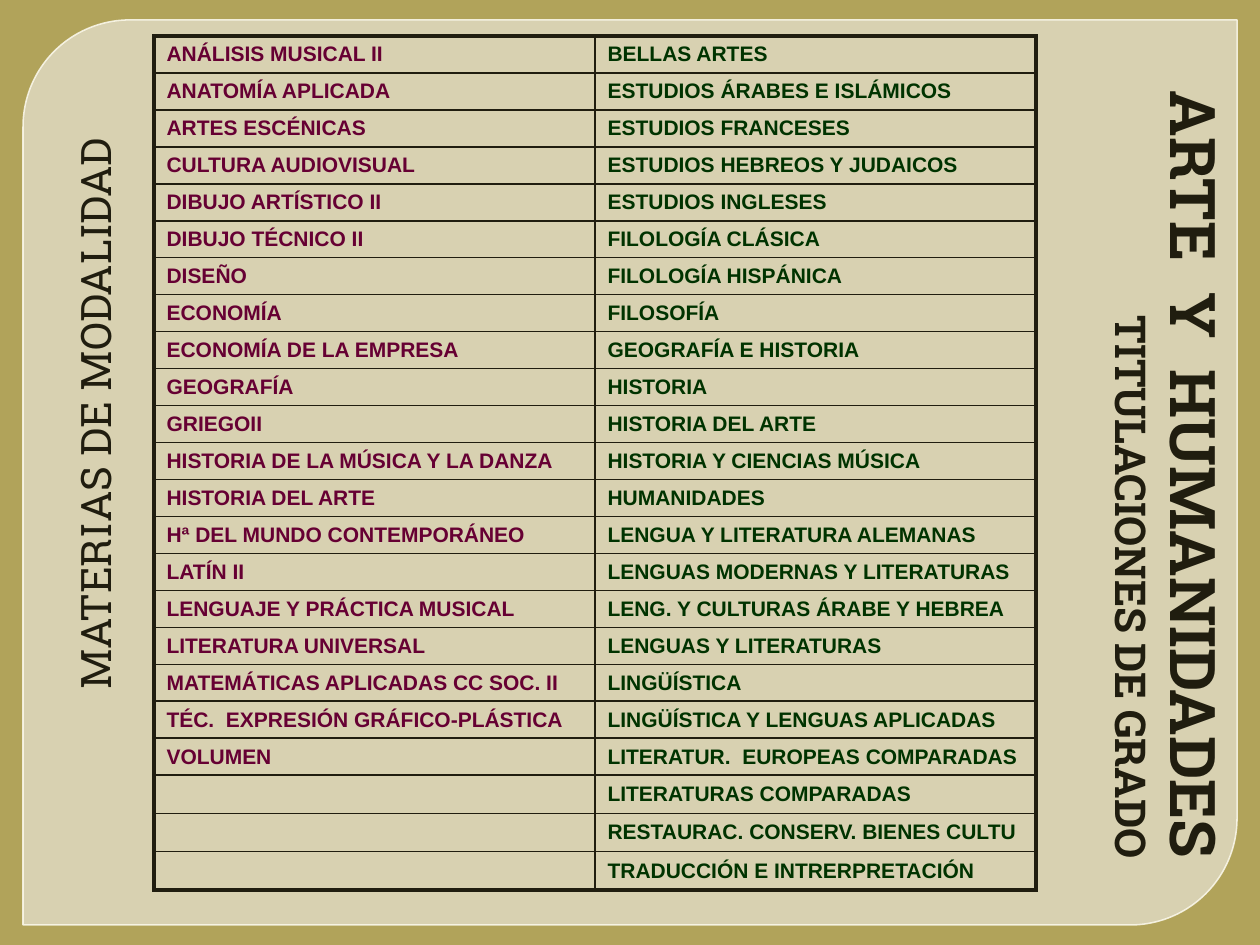
from itertools import zip_longest

from lxml import etree
from pptx import Presentation
from pptx.dml.color import RGBColor
from pptx.enum.shapes import MSO_SHAPE
from pptx.enum.text import MSO_ANCHOR, MSO_AUTO_SIZE, PP_ALIGN
from pptx.oxml.ns import qn
from pptx.util import Emu, Pt

PANEL_SHAPE = MSO_SHAPE.ROUND_2_DIAG_RECTANGLE
TOP, MIDDLE, BOTTOM = MSO_ANCHOR.TOP, MSO_ANCHOR.MIDDLE, MSO_ANCHOR.BOTTOM
NO_AUTOFIT = MSO_AUTO_SIZE.NONE
RIGHT = PP_ALIGN.RIGHT
SECTION_LAYOUT = 2

PX_PER_INCH = 126
COLORS = {
    "background": "B1A35A",
    "panel": "EEEBE0",
    "panel_line": "FBF8EB",
    "ink": "201D0F",
    "subject": "660033",
    "degree": "003300",
}
HEADING_FONT, TABLE_FONT = "Roboto Slab", "Arial"
TABLE_SIZE = 12
THICK, THIN = 2.25, 1

SUBJECTS = [
    "ANÁLISIS MUSICAL II", "ANATOMÍA APLICADA", "ARTES ESCÉNICAS",
    "CULTURA AUDIOVISUAL", "DIBUJO ARTÍSTICO II", "DIBUJO TÉCNICO II",
    "DISEÑO", "ECONOMÍA", "ECONOMÍA DE LA EMPRESA", "GEOGRAFÍA", "GRIEGOII",
    "HISTORIA DE LA MÚSICA Y LA DANZA", "HISTORIA DEL ARTE",
    "Hª DEL MUNDO CONTEMPORÁNEO", "LATÍN II", "LENGUAJE Y PRÁCTICA MUSICAL",
    "LITERATURA UNIVERSAL", "MATEMÁTICAS APLICADAS CC SOC. II",
    "TÉC.  EXPRESIÓN GRÁFICO-PLÁSTICA", "VOLUMEN",
]
DEGREES = [
    "BELLAS ARTES", "ESTUDIOS ÁRABES E ISLÁMICOS", "ESTUDIOS FRANCESES",
    "ESTUDIOS HEBREOS Y JUDAICOS", "ESTUDIOS INGLESES", "FILOLOGÍA CLÁSICA",
    "FILOLOGÍA HISPÁNICA", "FILOSOFÍA", "GEOGRAFÍA E HISTORIA", "HISTORIA",
    "HISTORIA DEL ARTE", "HISTORIA Y CIENCIAS MÚSICA", "HUMANIDADES",
    "LENGUA Y LITERATURA ALEMANAS", "LENGUAS MODERNAS Y LITERATURAS",
    "LENG. Y CULTURAS ÁRABE Y HEBREA", "LENGUAS Y LITERATURAS",
    "LINGÜÍSTICA", "LINGÜÍSTICA Y LENGUAS APLICADAS",
    "LITERATUR.  EUROPEAS COMPARADAS", "LITERATURAS COMPARADAS",
    "RESTAURAC. CONSERV. BIENES CULTU", "TRADUCCIÓN E INTRERPRETACIÓN",
]


def px(length):
    return Emu(round(length * 914400 / PX_PER_INCH))


def rgb(name):
    return RGBColor.from_string(COLORS[name])


def style_run(run, font, size, color, bold):
    run.font.name = font
    run.font.size = Pt(size)
    run.font.bold = bold
    run.font.color.rgb = rgb(color)


def set_alpha(fill_element, percent):
    color = fill_element.find(".//" + qn("a:srgbClr"))
    etree.SubElement(color, qn("a:alpha"), val=str(percent * 1000))


def add_panel(slide, left, top, width, height):
    panel = slide.shapes.add_shape(PANEL_SHAPE, px(left), px(top), px(width), px(height))
    panel.shadow.inherit = False
    panel.adjustments[0] = 0.118
    panel.adjustments[1] = 0
    panel.fill.solid()
    panel.fill.fore_color.rgb = rgb("panel")
    panel.line.color.rgb = rgb("panel_line")
    panel.line.width = Pt(0.87)
    properties = panel.element.spPr
    set_alpha(properties.find(qn("a:solidFill")), 65)
    set_alpha(properties.find(qn("a:ln")), 88)
    # Behind the placeholders
    slide.shapes.element.insert(2, panel.element)


def fill_heading(shape, box, rotation, lines, sizes, bold, anchor):
    """Place a rotated placeholder; box is its frame before rotation."""
    shape.left, shape.top, shape.width, shape.height = map(px, box)
    shape.rotation = rotation
    frame = shape.text_frame
    frame.word_wrap = True
    frame.auto_size = NO_AUTOFIT
    frame.vertical_anchor = anchor
    paragraph = frame.paragraphs[0]
    paragraph.text = "\v".join(lines)
    paragraph.alignment = RIGHT
    paragraph.space_before = Pt(0)
    for run, size in zip(paragraph.runs, sizes):
        style_run(run, HEADING_FONT, size, "ink", bold)


def set_borders(cell, widths):
    properties = cell._tc.get_or_add_tcPr()
    for position, (side, width) in enumerate(zip("LRTB", widths)):
        line = etree.Element(qn(f"a:ln{side}"), w=str(Pt(width)))
        fill = etree.SubElement(line, qn("a:solidFill"))
        etree.SubElement(fill, qn("a:srgbClr"), val=COLORS["ink"])
        properties.insert(position, line)


def add_degree_table(slide, left, top, width, row_height):
    rows = list(zip_longest(SUBJECTS, DEGREES, fillvalue=""))
    last = len(rows) - 1
    table = slide.shapes.add_table(
        len(rows), 2, px(left), px(top), px(width), px(row_height * len(rows))
    ).table
    table.first_row = table.horz_banding = False
    for row_index, texts in enumerate(rows):
        table.rows[row_index].height = px(row_height)
        for column, (text, color) in enumerate(zip(texts, ("subject", "degree"))):
            cell = table.cell(row_index, column)
            cell.fill.background()
            cell.vertical_anchor = MIDDLE
            outer_edges = (column == 0, column == 1, row_index == 0, row_index == last)
            set_borders(cell, [THICK if outer else THIN for outer in outer_edges])
            paragraph = cell.text_frame.paragraphs[0]
            if text:
                paragraph.text = text
                style_run(paragraph.runs[0], TABLE_FONT, TABLE_SIZE, color, True)
            else:
                # Keeps an empty row as low as the others
                paragraph._p.get_or_add_endParaRPr().set("sz", str(TABLE_SIZE * 100))


def main():
    presentation = Presentation()
    presentation.slide_width, presentation.slide_height = px(1260), px(945)
    slide = presentation.slides.add_slide(presentation.slide_layouts[SECTION_LAYOUT])
    slide.background.fill.solid()
    slide.background.fill.fore_color.rgb = rgb("background")

    add_panel(slide, 23, 20, 1214, 905)

    # Side headings
    title, body = slide.placeholders
    fill_heading(title, (714, 398, 825, 121), 90,
                 ["ARTE  Y  HUMANIDADES", "TITULACIONES DE GRADO"],
                 [36, 24.3], True, BOTTOM)
    title.text_frame.margin_bottom = px(41)
    fill_heading(body, (-260, 449, 756, 110), 270,
                 ["MATERIAS DE MODALIDAD"], [24], False, TOP)

    add_degree_table(slide, 154, 36, 882, 37)
    presentation.save("out.pptx")


if __name__ == "__main__":
    main()
